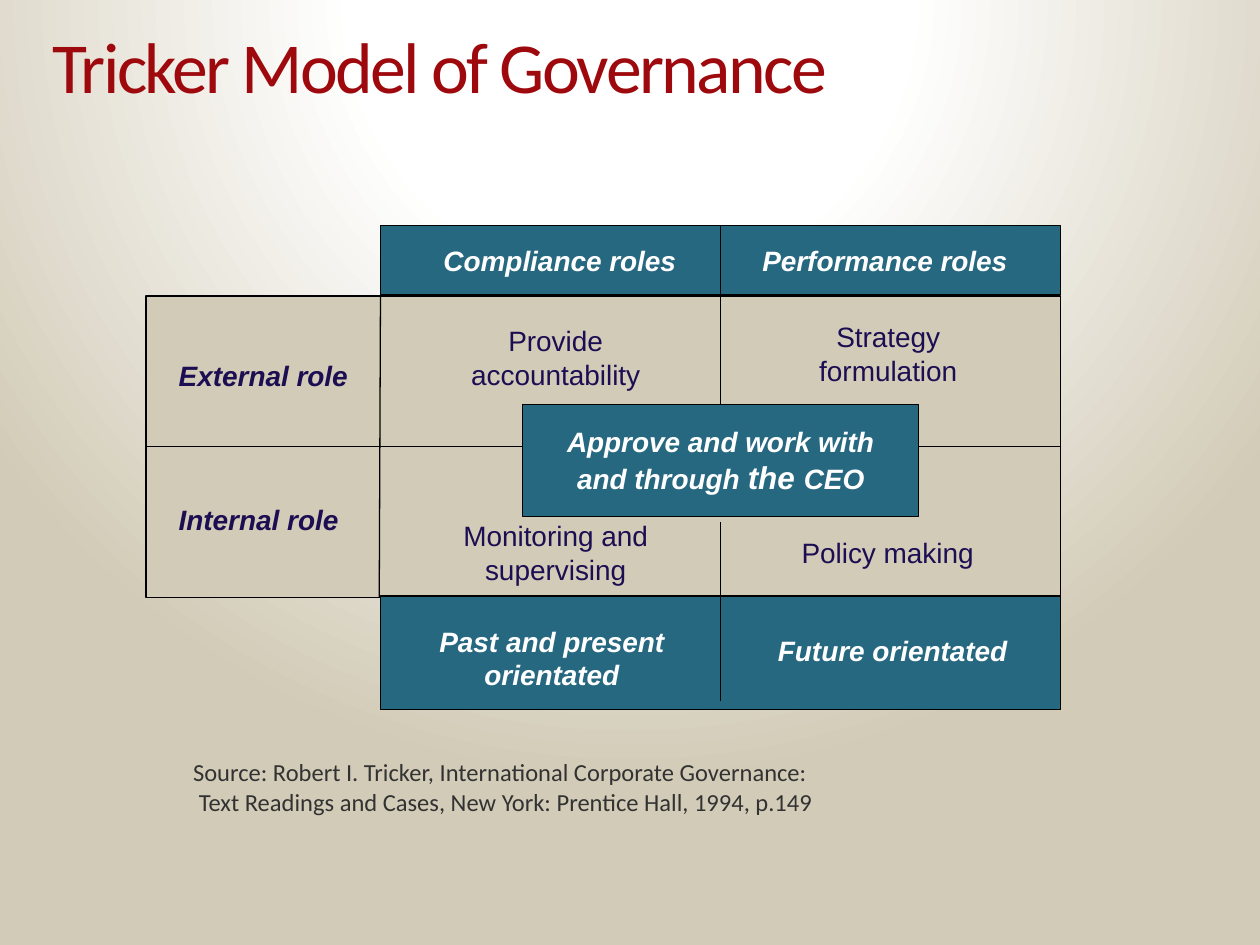
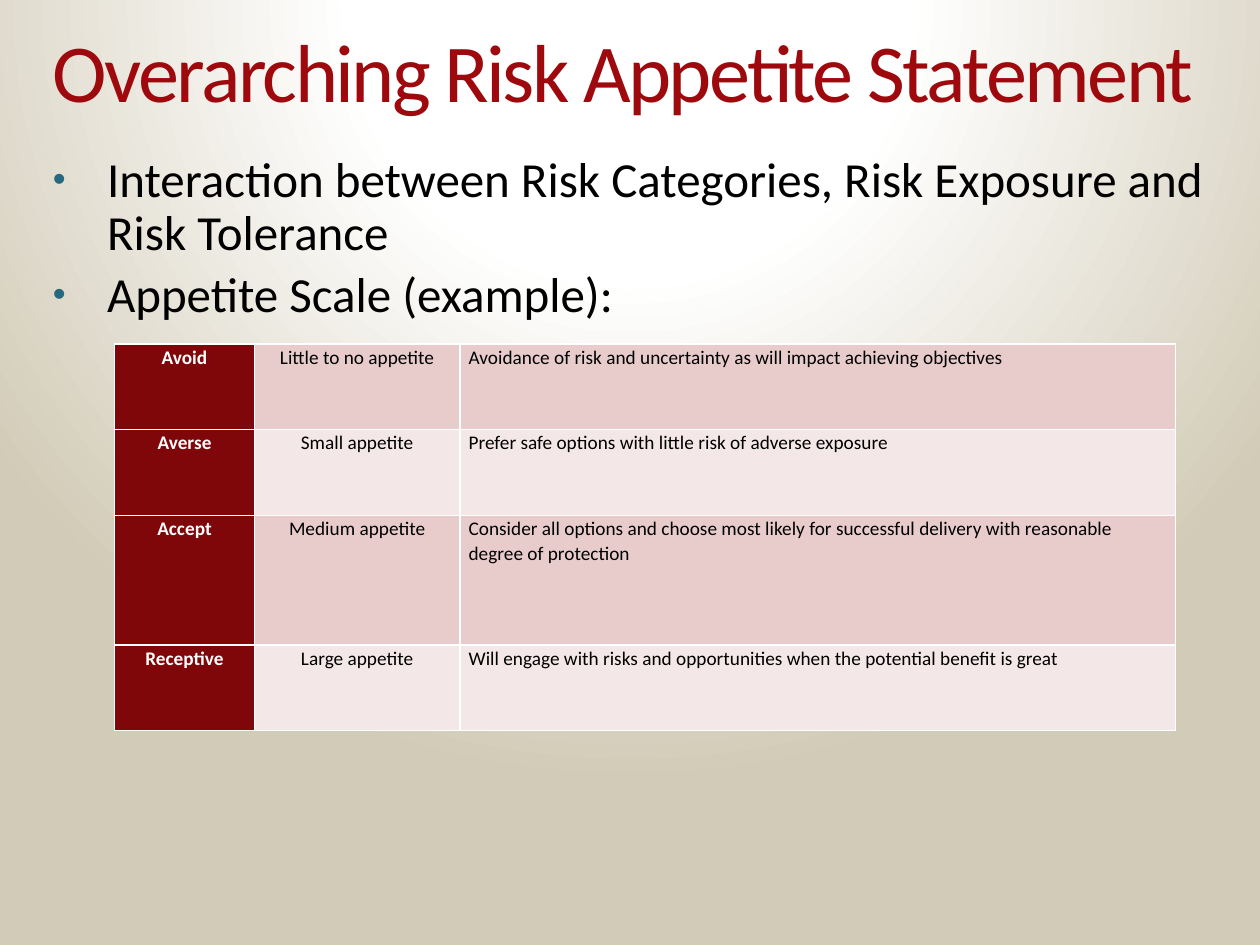
from lxml import etree
from pptx import Presentation
from pptx.dml.color import RGBColor
from pptx.enum.shapes import MSO_CONNECTOR, MSO_SHAPE
from pptx.enum.text import MSO_ANCHOR, MSO_AUTO_SIZE, PP_ALIGN
from pptx.oxml import parse_xml
from pptx.oxml.ns import nsdecls, qn
from pptx.util import Inches, Pt

RECT = MSO_SHAPE.RECTANGLE
STRAIGHT = MSO_CONNECTOR.STRAIGHT
LEFT, CENTER, RIGHT = PP_ALIGN.LEFT, PP_ALIGN.CENTER, PP_ALIGN.RIGHT
TOP, MIDDLE = MSO_ANCHOR.TOP, MSO_ANCHOR.MIDDLE
NO_AUTOFIT = MSO_AUTO_SIZE.NONE

RED = RGBColor(0x9E, 0x09, 0x0E)
DARK_RED = RGBColor(0x7F, 0x07, 0x0A)
PINK = RGBColor(0xE8, 0xCC, 0xCC)
PALE_PINK = RGBColor(0xF4, 0xE7, 0xE7)
TEAL = RGBColor(0x27, 0x68, 0x81)
SAND = RGBColor(0xD2, 0xCB, 0xB7)
INDIGO = RGBColor(0x1C, 0x0E, 0x52)
GREY = RGBColor(0x32, 0x32, 0x32)
BLACK = RGBColor(0, 0, 0)
WHITE = RGBColor(0xFF, 0xFF, 0xFF)


def write(tf, text, font, size, color, align=LEFT, strong=False, italic=False):
    tf.word_wrap = True
    tf.text = text
    for p in tf.paragraphs:
        p.alignment = align
        for r in p.runs:
            r.font.name = font
            r.font.size = Pt(size)
            r.font.color.rgb = color
            r.font.bold = strong
            r.font.italic = italic


def add_line(s, x1, y1, x2, y2):
    c = s.shapes.add_connector(STRAIGHT, Inches(x1), Inches(y1), Inches(x2), Inches(y2))
    c.line.color.rgb = BLACK
    c.line.width = Pt(0.75)
    etree.SubElement(c.element.spPr, qn("a:effectLst"))
    return c


prs = Presentation()
prs.slide_width = Inches(10)
prs.slide_height = Inches(7.5)

master = prs.slide_master
master.background.fill.gradient()
grad = master.element.find(".//" + qn("a:gradFill"))
stops = "".join(
    f'<a:gs pos="{pos * 1000}"><a:srgbClr val="{color}"/></a:gs>'
    for pos, color in ((0, WHITE), (35, WHITE), (100, SAND))
)
grad.getparent().replace(grad, parse_xml(
    f'<a:gradFill {nsdecls("a")} rotWithShape="1"><a:gsLst>{stops}</a:gsLst>'
    '<a:path path="circle"><a:fillToRect l="50000" t="-80000" r="50000" b="180000"/>'
    '</a:path></a:gradFill>'))

slides = []
for title, size, height in (
    ("Tricker Model of Governance", 41, 0.62),
    ("Overarching Risk Appetite Statement", 47, 0.67),
):
    s = prs.slides.add_slide(prs.slide_layouts[5])
    sp = s.shapes.title
    sp.left, sp.top = Inches(0.42), Inches(0.25)
    sp.width, sp.height = Inches(9.17), Inches(height)
    tf = sp.text_frame
    write(tf, title, "Calibri", size, RED)
    tf.auto_size = NO_AUTOFIT
    tf.vertical_anchor = TOP
    tf.margin_left = tf.margin_top = tf.margin_right = tf.margin_bottom = 0
    tf.paragraphs[0].line_spacing = 0.9
    tf.paragraphs[0].runs[0].font._element.set("spc", "-150")
    slides.append(s)
governance, appetite = slides

boxes = {}
for name, x, y, w, h, color in (
    ("matrix", 1.16, 2.35, 7.26, 2.39, SAND),
    ("footer", 3.02, 4.73, 5.4, 0.9, TEAL),
    ("header", 3.02, 1.79, 5.4, 0.55, TEAL),
    ("ceo", 4.15, 3.21, 3.14, 0.89, TEAL),
):
    if name == "ceo":
        c = add_line(governance, 1.16, 3.54, 8.42, 3.54)
        c.begin_connect(boxes["matrix"], 1)
        c.end_connect(boxes["matrix"], 3)
    sp = governance.shapes.add_shape(RECT, Inches(x), Inches(y), Inches(w), Inches(h))
    sp.shadow.inherit = False
    sp.fill.solid()
    sp.fill.fore_color.rgb = color
    sp.line.color.rgb = BLACK
    sp.line.width = Pt(0.75)
    boxes[name] = sp

tf = boxes["header"].text_frame
tf.margin_left = Inches(0.5)
write(tf, "Compliance roles\tPerformance roles", "Arial", 16, WHITE, LEFT, True, True)
tabs = etree.SubElement(tf.paragraphs[0]._p.get_or_add_pPr(), qn("a:tabLst"))
etree.SubElement(tabs, qn("a:tab"), pos=str(Inches(2.53)), algn="l")

tf = boxes["ceo"].text_frame
write(tf, "Approve and work with\vand through ", "Arial", 16, WHITE, CENTER, True, True)
p = tf.paragraphs[0]
for text, size in (("the ", 18), ("CEO", 16)):
    r = p.add_run()
    r.text = text
    r.font.name = "Arial"
    r.font.size = Pt(size)
    r.font.color.rgb = WHITE
    r.font.bold = r.font.italic = True

for text, x, y, w, h, color, align, strong in (
    ("Provide\vaccountability", 3.29, 2.52, 2.24, 0.64, INDIGO, CENTER, False),
    ("Strategy\vformulation", 6.06, 2.49, 1.98, 0.64, INDIGO, CENTER, False),
    ("Monitoring and\vsupervising", 3.37, 4.07, 2.08, 0.64, INDIGO, CENTER, False),
    ("Policy making", 6.12, 4.2, 1.85, 0.37, INDIGO, CENTER, False),
    ("Past and present\norientated", 3.22, 4.9, 2.32, 0.64, WHITE, CENTER, True),
    ("Future orientated", 5.99, 4.98, 2.19, 0.37, WHITE, CENTER, True),
    ("External role", 1.32, 2.8, 1.65, 0.37, INDIGO, LEFT, True),
    ("Internal role", 1.32, 3.94, 1.7, 0.37, INDIGO, LEFT, True),
):
    sp = governance.shapes.add_textbox(Inches(x), Inches(y), Inches(w), Inches(h))
    write(sp.text_frame, text, "Arial", 16, color, align, strong, strong)
    if color == WHITE:
        sp.text_frame.vertical_anchor = MIDDLE

sp = governance.shapes.add_textbox(Inches(0.75), Inches(5.96), Inches(5.8), Inches(0.57))
write(sp.text_frame,
      "Source: Robert I. Tricker, International Corporate Governance: \v"
      "Text Readings and Cases, New York: Prentice Hall, 1994, p.149",
      "Calibri", 14, GREY, RIGHT)

c = add_line(governance, 5.72, 1.79, 5.72, 3.21)
c.begin_connect(boxes["header"], 0)
c.end_connect(boxes["ceo"], 0)
add_line(governance, 5.72, 4.14, 5.72, 5.56)
add_line(governance, 3.02, 2.35, 3.01, 4.74)

sp = appetite.shapes.add_textbox(Inches(0.42), Inches(1.23), Inches(9.17), Inches(2.4))
tf = sp.text_frame
tf.margin_left = tf.margin_top = tf.margin_right = tf.margin_bottom = 0
write(tf,
      "Interaction between Risk Categories, Risk Exposure and Risk Tolerance\n"
      "Appetite Scale (example):",
      "Calibri", 28, BLACK)
for i, p in enumerate(tf.paragraphs):
    p.line_spacing = 0.9
    p.space_before = Pt(5.6 * i)
    pPr = p._p.get_or_add_pPr()
    pPr.set("marL", str(Inches(0.43)))
    pPr.set("indent", str(-Inches(0.43)))
    color = etree.SubElement(pPr, qn("a:buClr"))
    etree.SubElement(color, qn("a:srgbClr"), val=str(TEAL))
    etree.SubElement(pPr, qn("a:buSzPct"), val="75000")
    etree.SubElement(pPr, qn("a:buFont"), typeface="Arial")
    etree.SubElement(pPr, qn("a:buChar"), char="•")

scale = (
    ("Avoid", "Little to no appetite",
     "Avoidance of risk and uncertainty as will impact achieving objectives"),
    ("Averse", "Small appetite",
     "Prefer safe options with little risk of adverse exposure"),
    ("Accept", "Medium appetite",
     "Consider all options and choose most likely for successful delivery "
     "with reasonable degree of protection"),
    ("Receptive", "Large appetite",
     "Will engage with risks and opportunities when the potential benefit is great"),
)
table = appetite.shapes.add_table(
    4, 3, Inches(0.91), Inches(2.73), Inches(8.42), Inches(3.07)).table
table.first_row = table.horz_banding = False
for column, width in zip(table.columns, (1.11, 1.63, 5.68)):
    column.width = Inches(width)
for row, height in zip(table.rows, (0.68, 0.68, 1.03, 0.68)):
    row.height = Inches(height)
for i, texts in enumerate(scale):
    for j, text in enumerate(texts):
        cell = table.cell(i, j)
        cell.margin_left = cell.margin_right = Inches(0.07)
        cell.margin_top = cell.margin_bottom = 0
        write(cell.text_frame, text, "Calibri", 11, BLACK if j else WHITE,
              LEFT if j == 2 else CENTER, j == 0)
        cell.text_frame.paragraphs[0].line_spacing = 1.07
        tcPr = cell._tc.get_or_add_tcPr()
        for side in ("lnL", "lnR", "lnT", "lnB"):
            ln = etree.SubElement(tcPr, qn("a:" + side), w=str(Pt(1)))
            fill = etree.SubElement(ln, qn("a:solidFill"))
            etree.SubElement(fill, qn("a:srgbClr"), val=str(WHITE))
        cell.fill.solid()
        cell.fill.fore_color.rgb = DARK_RED if j == 0 else (PINK, PALE_PINK)[i % 2]

prs.save("out.pptx")
